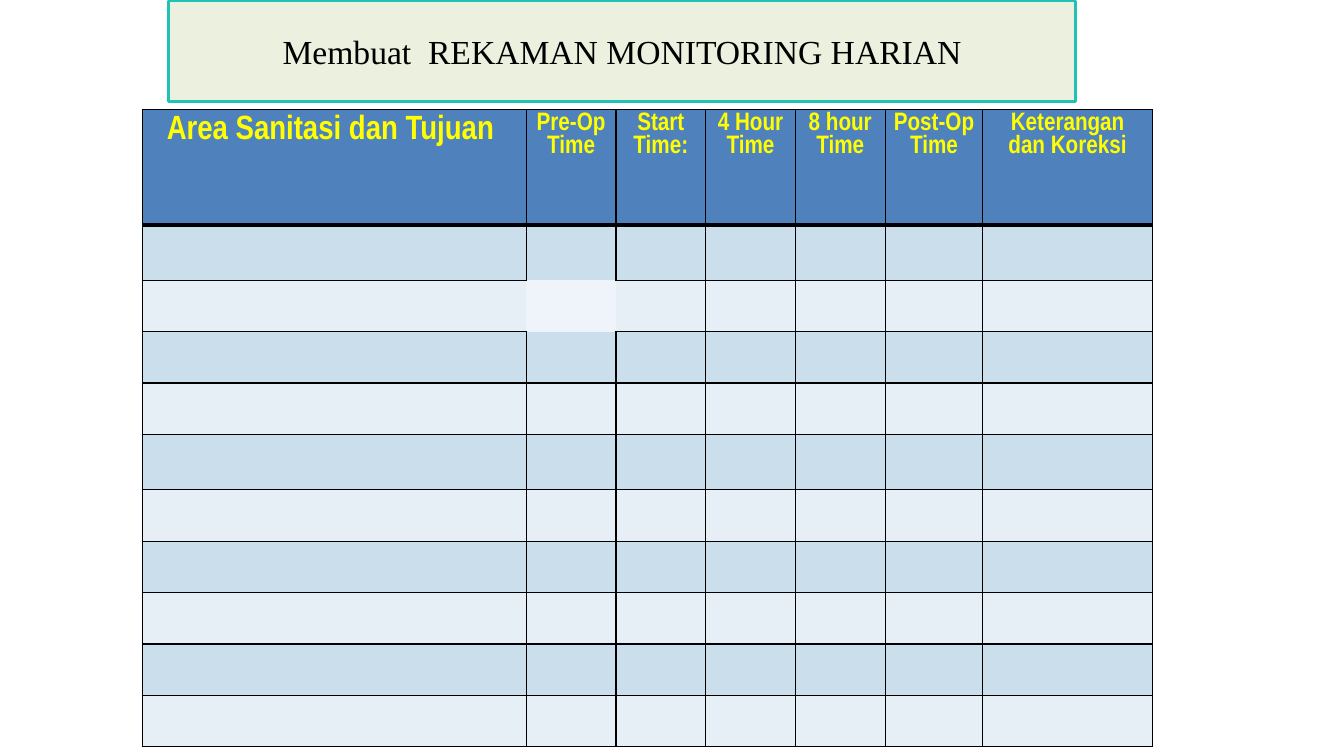
from dataclasses import dataclass
from lxml.etree import SubElement
from pptx import Presentation
from pptx.dml.color import RGBColor as RGB
from pptx.enum.text import MSO_ANCHOR as Anchor, PP_ALIGN as Align
from pptx.oxml.ns import qn
from pptx.util import Inches, Pt


@dataclass(frozen=True)
class Theme:
    ink: str = "000000"
    title_fill: str = "EBF1DE"
    title_line: str = "20C2B6"
    header_fill: str = "4F81BD"
    header_text: str = "FFFF00"
    odd_fill: str = "CBDEEC"
    even_fill: str = "E7EFF6"
    clear_fill: str = "EEF4F9"
    title_font: str = "Times New Roman"
    header_font: str = "Arial Narrow"
    large: int = 24
    small: int = 18
    thin: int = 1
    thick: int = 3


@dataclass(frozen=True)
class Column:
    heading: str
    width: float
    size: int = Theme.small
    side_inset: float = 0.07
    top_inset: float = 0.02


THEME = Theme()
COLUMNS = [
    Column("Area Sanitasi dan Tujuan ", 3.81, THEME.large, 0.1, 0.05),
    Column("Pre-Op\nTime", 0.89),
    Column("Start\nTime:", 0.89),
    Column("4 Hour\nTime", 0.89),
    Column("8 hour Time", 0.89),
    Column("Post-Op Time", 0.97),
    Column("Keterangan dan Koreksi", 1.68),
]
HEADER_HEIGHT, ROW_HEIGHT, TALL_HEIGHT = 1.14, 0.51, 0.55
TALL_ROWS = (1, 5)
ROW_COUNT = 11
CLEAR_CELL = (2, 1)
SIDES = {"L": (0, -1), "R": (0, 1), "T": (-1, 0), "B": (1, 0)}


def format_text(frame, font: str, size: int, color: str, bold: bool) -> None:
    for paragraph in frame.paragraphs:
        paragraph.alignment = Align.CENTER
        paragraph.line_spacing = 1.0
        for run in paragraph.runs:
            run.font.name = font
            run.font.size = Pt(size)
            run.font.bold = bold
            run.font.color.rgb = RGB.from_string(color)


def draw_border(cell, side: str, width: int) -> None:
    line = SubElement(cell._tc.get_or_add_tcPr(), qn(f"a:ln{side}"), w=str(Pt(width)))
    if width:
        solid = SubElement(line, qn("a:solidFill"))
        SubElement(solid, qn("a:srgbClr"), val=THEME.ink)
    else:
        SubElement(line, qn("a:noFill"))


def border_width(row: int, column: int, side: str) -> int:
    down, across = SIDES[side]
    if CLEAR_CELL in ((row, column), (row + down, column + across)):
        return 0
    return THEME.thick if (row, side) in ((0, "B"), (1, "T")) else THEME.thin


def cell_fill(row: int, column: int) -> str:
    if row == 0:
        return THEME.header_fill
    if (row, column) == CLEAR_CELL:
        return THEME.clear_fill
    return THEME.odd_fill if row % 2 else THEME.even_fill


def draw_title(slide) -> None:
    title = slide.shapes.title
    title.left, title.top = Inches(1.67), Inches(0.01)
    title.width, title.height = Inches(9), Inches(1)
    outline = SubElement(title._element.spPr, qn("a:prstGeom"), prst="round2DiagRect")
    SubElement(outline, qn("a:avLst"))
    title.fill.solid()
    title.fill.fore_color.rgb = RGB.from_string(THEME.title_fill)
    title.line.color.rgb = RGB.from_string(THEME.title_line)
    title.line.width = Pt(2)
    frame = title.text_frame
    frame.text = "Membuat  REKAMAN MONITORING HARIAN"
    frame.word_wrap = True
    frame.vertical_anchor = Anchor.MIDDLE
    format_text(frame, THEME.title_font, THEME.large, THEME.ink, False)


def write_heading(cell, column: Column) -> None:
    cell.margin_left = cell.margin_right = Inches(column.side_inset)
    cell.margin_top = cell.margin_bottom = Inches(column.top_inset)
    cell.text_frame.text = column.heading
    format_text(cell.text_frame, THEME.header_font, column.size, THEME.header_text, True)


def draw_record(slide) -> None:
    record = slide.shapes.add_table(
        ROW_COUNT, len(COLUMNS), Inches(1.41), Inches(1.09), Inches(10), Inches(6.33)
    ).table
    record.first_row = record.horz_banding = False
    for index, row in enumerate(record.rows):
        height = TALL_HEIGHT if index in TALL_ROWS else ROW_HEIGHT
        row.height = Inches(height if index else HEADER_HEIGHT)
    for column_index, column in enumerate(COLUMNS):
        record.columns[column_index].width = Inches(column.width)
        write_heading(record.cell(0, column_index), column)
        for row_index in range(ROW_COUNT):
            cell = record.cell(row_index, column_index)
            for side in SIDES:
                draw_border(cell, side, border_width(row_index, column_index, side))
            cell.fill.solid()
            cell.fill.fore_color.rgb = RGB.from_string(cell_fill(row_index, column_index))


def main() -> None:
    deck = Presentation()
    deck.slide_width, deck.slide_height = Inches(13.33), Inches(7.5)
    slide = deck.slides.add_slide(deck.slide_layouts[5])
    draw_title(slide)
    draw_record(slide)
    deck.save("out.pptx")


if __name__ == "__main__":
    main()
